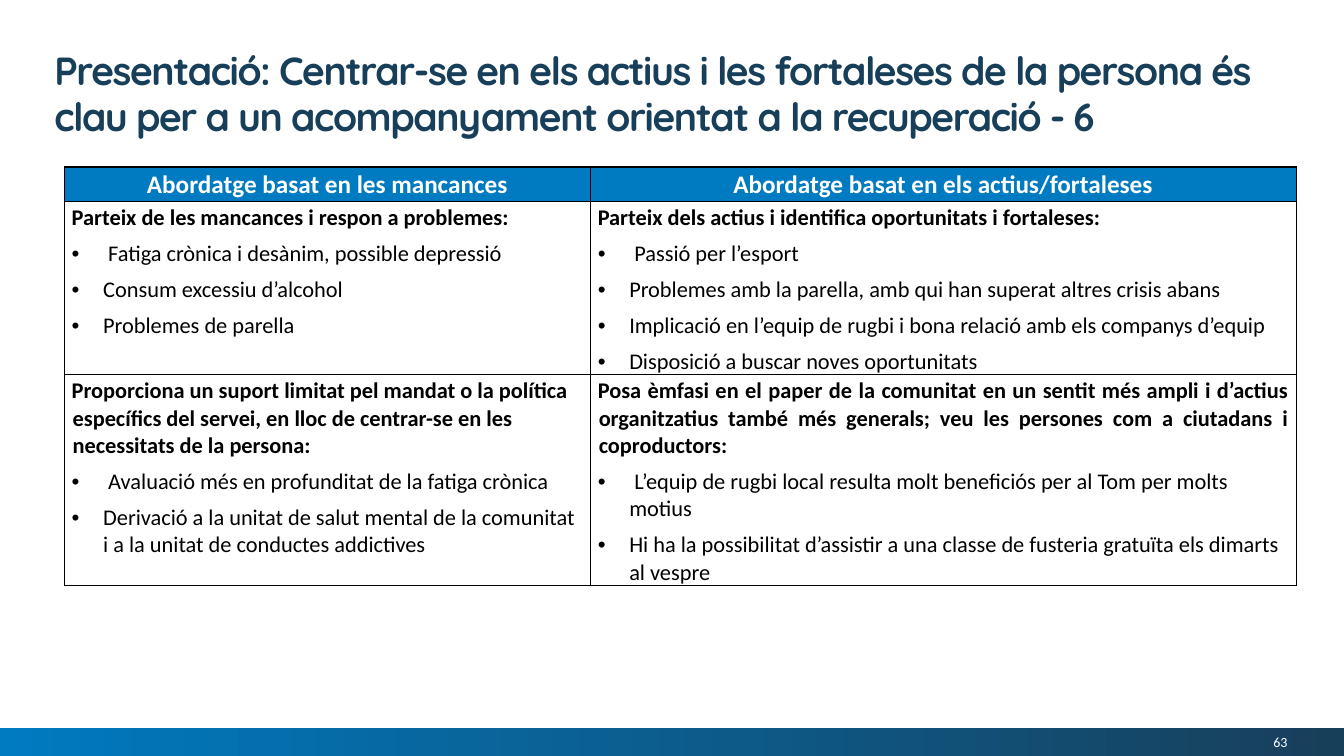
from lxml import etree
from pptx import Presentation
from pptx import util as u
from pptx.dml.color import RGBColor
from pptx.enum import shapes, text
from pptx.oxml.ns import qn

Pt = u.Pt
BLUE = RGBColor(0x00, 0x7A, 0xC0)
NAVY = RGBColor(0x18, 0x3F, 0x5A)
WHITE = RGBColor(0xFF, 0xFF, 0xFF)
BLACK = RGBColor(0x00, 0x00, 0x00)
ALIGN = text.PP_ALIGN

TITLE = ("Presentació: Centrar-se en els actius i les fortaleses de la persona és "
         "clau per a un acompanyament orientat a la recuperació - 6")
HEADINGS = ["Abordatge basat en les mancances", "Abordatge basat en els actius/fortaleses"]
APPROACHES = [
    [("Parteix de les mancances i respon a problemes:", ALIGN.LEFT,
      [" Fatiga crònica i desànim, possible depressió",
       "Consum excessiu d’alcohol",
       "Problemes de parella"]),
     ("Parteix dels actius i identifica oportunitats i fortaleses:", ALIGN.LEFT,
      [" Passió per l’esport",
       "Problemes amb la parella, amb qui han superat altres crisis abans",
       "Implicació en l’equip de rugbi i bona relació amb els companys d’equip",
       "Disposició a buscar noves oportunitats"])],
    [("Proporciona un suport limitat pel mandat o la política específics del servei, "
      "en lloc de centrar-se en les necessitats de la persona:", ALIGN.LEFT,
      [" Avaluació més en profunditat de la fatiga crònica",
       "Derivació a la unitat de salut mental de la comunitat i a la unitat de "
       "conductes addictives"]),
     ("Posa èmfasi en el paper de la comunitat en un sentit més ampli i d’actius "
      "organitzatius també més generals; veu les persones com a ciutadans i "
      "coproductors:", ALIGN.JUSTIFY,
      [" L’equip de rugbi local resulta molt beneficiós per al Tom per molts motius",
       "Hi ha la possibilitat d’assistir a una classe de fusteria gratuïta els "
       "dimarts al vespre"])],
]
COLUMN_WIDTHS = [375.8, 504]
ROW_HEIGHTS = [24.8, 123.7, 150.7]


def write(paragraph, words, size=16, font="Calibri", color=BLACK, bold=False,
          align=ALIGN.LEFT, hanging=0, bullet=False, after=0, line=None, tracking=0):
    paragraph.alignment = align
    paragraph.space_after = Pt(after)
    if line:
        paragraph.line_spacing = Pt(line)
    properties = paragraph._p.get_or_add_pPr()
    properties.set("marL", str(Pt(hanging)))
    properties.set("indent", str(-Pt(hanging)))
    if bullet:
        etree.SubElement(properties, qn("a:buFont")).set("typeface", "Arial")
        etree.SubElement(properties, qn("a:buChar")).set("char", "•")
    run = paragraph.add_run()
    run.text = words
    run.font.name = font
    run.font.size = Pt(size)
    run.font.bold = bold
    run.font.color.rgb = color
    if tracking:
        run._r.get_or_add_rPr().set("spc", str(tracking * 100))


def outline(cell):
    properties = cell._tc.get_or_add_tcPr()
    for order, side in enumerate(("lnL", "lnR", "lnT", "lnB")):
        edge = etree.Element(qn("a:" + side), w=str(Pt(1)))
        fill = etree.SubElement(edge, qn("a:solidFill"))
        etree.SubElement(fill, qn("a:srgbClr")).set("val", str(BLACK))
        properties.insert(order, edge)


def prepare(cell, color):
    cell.margin_left, cell.margin_top = Pt(5), Pt(2)
    cell.margin_right, cell.margin_bottom = Pt(5.5), Pt(0)
    cell.fill.solid()
    cell.fill.fore_color.rgb = color
    outline(cell)


def add_title(slide, left, top, width, height):
    title = slide.shapes.add_textbox(Pt(left), Pt(top), Pt(width), Pt(height)).text_frame
    title.word_wrap = True
    write(title.paragraphs[0], TITLE, size=28, font="Quicksand", color=NAVY,
          bold=True, line=33, tracking=-1)


def add_comparison(slide, left, top):
    comparison = slide.shapes.add_table(
        len(ROW_HEIGHTS), len(COLUMN_WIDTHS), Pt(left), Pt(top),
        Pt(sum(COLUMN_WIDTHS)), Pt(sum(ROW_HEIGHTS))).table
    comparison.first_row = comparison.horz_banding = False
    for column, width in zip(comparison.columns, COLUMN_WIDTHS):
        column.width = Pt(width)
    for row, height in zip(comparison.rows, ROW_HEIGHTS):
        row.height = Pt(height)

    for column, heading in enumerate(HEADINGS):
        cell = comparison.cell(0, column)
        prepare(cell, BLUE)
        write(cell.text_frame.paragraphs[0], heading, size=18, color=WHITE,
              bold=True, align=ALIGN.CENTER, hanging=0.7, after=6)

    for row, approaches in enumerate(APPROACHES, 1):
        for column, (principle, align, examples) in enumerate(approaches):
            cell = comparison.cell(row, column)
            prepare(cell, WHITE)
            frame = cell.text_frame
            write(frame.paragraphs[0], principle, bold=True, align=align,
                  hanging=0.7, after=6)
            for example in examples:
                write(frame.add_paragraph(), example, hanging=22.5, bullet=True, after=6)


def add_footer(slide, left, top, width, height):
    band = slide.shapes.add_shape(shapes.MSO_SHAPE.RECTANGLE, Pt(left), Pt(top),
                                  Pt(width), Pt(height))
    band.shadow.inherit = False
    band.line.fill.background()
    band.fill.gradient()
    band.fill.gradient_angle = 0
    for stop, color in zip(band.fill.gradient_stops, (BLUE, NAVY)):
        stop.color.rgb = color

    number = slide.shapes.add_textbox(Pt(left + width - 170), Pt(top + 1.5),
                                      Pt(129.6), Pt(17.3)).text_frame
    number.margin_left = number.margin_top = number.margin_right = number.margin_bottom = 0
    number.word_wrap = True
    number.vertical_anchor = text.MSO_ANCHOR.MIDDLE
    write(number.paragraphs[0], "63", size=10, color=WHITE, align=ALIGN.RIGHT)


def main():
    deck = Presentation()
    deck.slide_width, deck.slide_height = Pt(960), Pt(540)
    slide = deck.slides.add_slide(deck.slide_layouts[6])
    add_footer(slide, 0, 520, 960, 20)
    add_comparison(slide, 46.2, 119.3)
    add_title(slide, 31.7, 30.2, 887, 38.9)
    deck.save("out.pptx")


if __name__ == "__main__":
    main()
